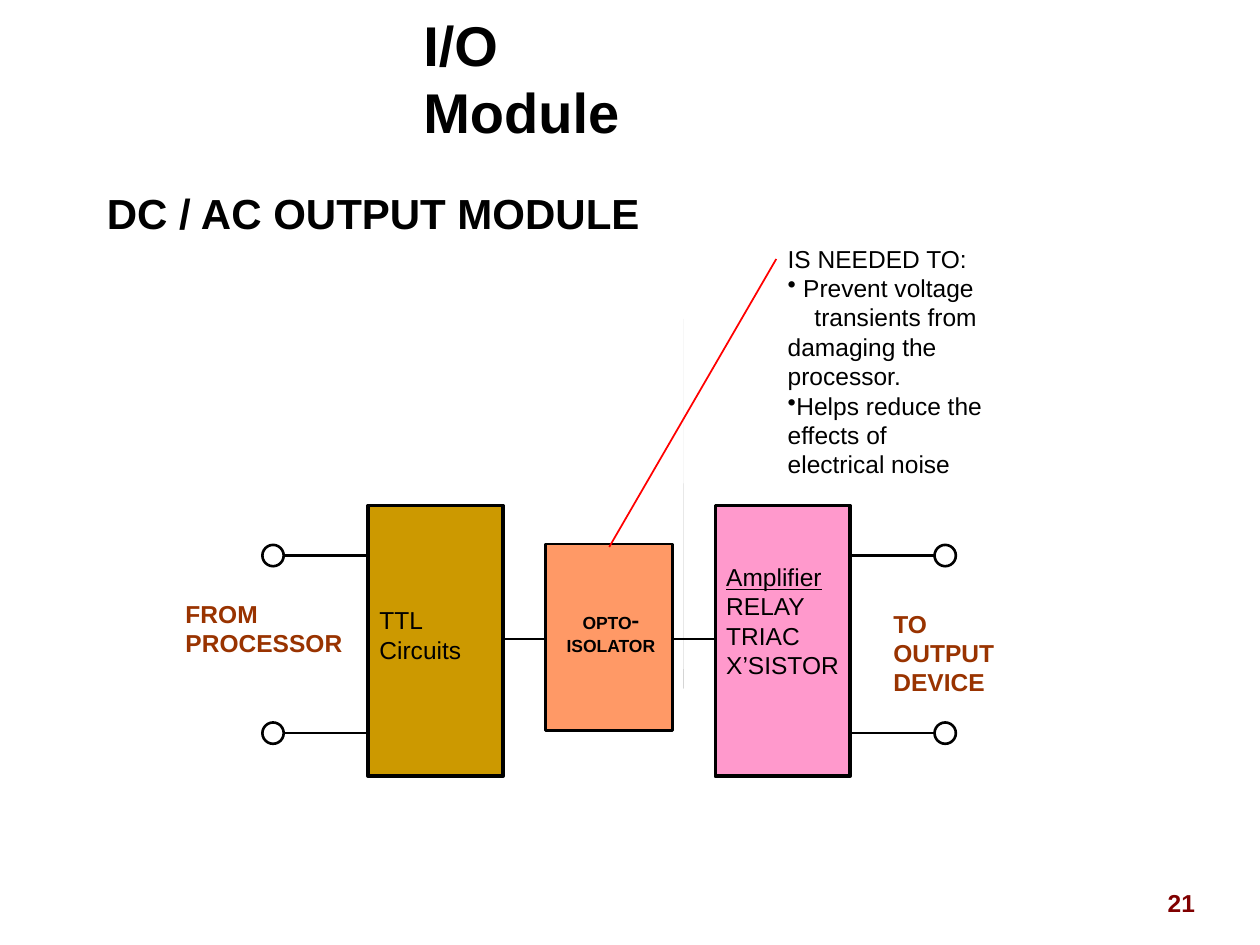
import pptx
import pptx.util
import pptx.dml.color
import pptx.enum.shapes
import pptx.enum.text
import pptx.oxml.ns
import lxml.etree

Cm = pptx.util.Cm
Pt = pptx.util.Pt
SHAPES = pptx.enum.shapes.MSO_SHAPE
ALIGN = pptx.enum.text.PP_ALIGN

COLORS = {"black": "000000", "maroon": "800000", "brown": "993300", "red": "FF0000",
          "gold": "CC9900", "orange": "FF9966", "pink": "FF99CC", "silver": "C0C0C0"}

TITLE = "I/O Module"
HEADING = "DC / AC OUTPUT MODULE"
PAGE_NUMBER = "21"
REASONS = [("IS NEEDED TO:", {}),
           (" Prevent voltage", {"bullet": "•"}),
           ("transients from damaging the processor.", {"indent": 0.54}),
           ("Helps reduce the effects of electrical noise", {"bullet": "•"})]
ISOLATOR = [("OPTO", {}), ("ISOLATOR", {})]
AMPLIFIER = [("Amplifier", {"underline": True}), ("RELAY", {}), ("TRIAC", {}), ("X’SISTOR", {})]
LABELS = [
    (["FROM PROCESSOR"], (3.71, 12.04, 3.56, 1.9), {"color": "brown", "bold": True}),
    (["TTL", "Circuits"], (7.62, 12.17, 2.24, 1.98), {}),
    (["TO", "OUTPUT", "DEVICE"], (17.98, 12.24, 3.38, 1.9), {"color": "brown", "bold": True}),
]

CENTER_X = 12.28
LINK_Y = 12.88
BLOCK_X, BLOCK_Y, BLOCK_W, BLOCK_H = 7.42, 10.19, 2.72, 5.46
ISOLATOR_W, ISOLATOR_H, ISOLATOR_Y = 2.56, 3.76, 10.97
TERMINAL_ROWS = (11.2, 14.78)
TERMINAL_SIZE = 0.43
LEAD = 1.7


def rgb(name):
    return pptx.dml.color.RGBColor.from_string(COLORS[name])


def place(box, left, top, width, height):
    box.left, box.top, box.width, box.height = Cm(left), Cm(top), Cm(width), Cm(height)


def add_span(para, text, size=14, font="Arial", color="black", bold=False, underline=False):
    span = para.add_run()
    span.text = text
    span.font.size = Pt(size)
    span.font.name = font
    span.font.bold = bold
    span.font.underline = underline
    span.font.color.rgb = rgb(color)


def write(box, lines, inset=0.03, align=ALIGN.LEFT, wrap=True, **style):
    frame = box.text_frame
    frame.word_wrap = wrap
    frame.auto_size = pptx.enum.text.MSO_AUTO_SIZE.NONE
    frame.vertical_anchor = pptx.enum.text.MSO_ANCHOR.TOP
    if inset is not None:
        frame.margin_left = frame.margin_right = Cm(inset)
        frame.margin_top = frame.margin_bottom = Cm(inset)
    for index, line in enumerate(lines):
        text, extra = (line, {}) if isinstance(line, str) else line
        extra = {**style, **extra}
        bullet = extra.pop("bullet", None)
        indent = extra.pop("indent", 0)
        para = frame.paragraphs[0] if index == 0 else frame.add_paragraph()
        para.alignment = align
        para.space_before = Pt(0)
        properties = para._p.get_or_add_pPr()
        properties.set("marL", "0")
        properties.set("indent", str(int(Cm(indent))))
        mark = lxml.etree.SubElement(
            properties, pptx.oxml.ns.qn("a:buChar" if bullet else "a:buNone"))
        if bullet:
            mark.set("char", bullet)
        add_span(para, text, **extra)


def add_text(page, lines, area, **style):
    box = page.shapes.add_textbox(*map(Cm, area))
    write(box, lines, **style)
    return box


def add_box(page, kind, area, fill=None, line="black", weight=1.5):
    box = page.shapes.add_shape(kind, *map(Cm, area))
    box.shadow.inherit = False
    if fill:
        box.fill.solid()
        box.fill.fore_color.rgb = rgb(fill)
    else:
        box.fill.background()
    if line:
        box.line.color.rgb = rgb(line)
        box.line.width = Pt(weight)
    else:
        box.line.fill.background()
    return box


def add_wire(page, start, end, y):
    wire = page.shapes.add_connector(
        pptx.enum.shapes.MSO_CONNECTOR.STRAIGHT, Cm(start), Cm(y), Cm(end), Cm(y))
    wire.line.color.rgb = rgb("black")
    wire.line.width = Pt(1.5)
    lxml.etree.SubElement(wire._element.spPr, pptx.oxml.ns.qn("a:effectLst"))


def add_divider(page):
    builder = page.shapes.build_freeform(Cm(13.77), Cm(6.43))
    builder.add_line_segments([(Cm(13.77), Cm(13.89)), (Cm(13.78), Cm(13.87))])
    divider = builder.convert_to_shape()
    divider.shadow.inherit = False
    divider.fill.solid()
    divider.fill.fore_color.rgb = rgb("silver")
    divider.line.fill.background()


def add_circuit(page, side, fill):
    def mirror(x):
        return CENTER_X + side * (CENTER_X - x)

    left = min(mirror(BLOCK_X), mirror(BLOCK_X + BLOCK_W))
    add_box(page, SHAPES.RECTANGLE, (left, BLOCK_Y, BLOCK_W, BLOCK_H), fill, weight=2)
    add_wire(page, mirror(BLOCK_X + BLOCK_W), mirror(CENTER_X - ISOLATOR_W / 2), LINK_Y)
    radius = TERMINAL_SIZE / 2
    for y in TERMINAL_ROWS:
        add_wire(page, mirror(BLOCK_X), mirror(BLOCK_X - LEAD), y)
        center = mirror(BLOCK_X - LEAD - radius)
        add_box(page, SHAPES.OVAL, (center - radius, y - radius, TERMINAL_SIZE, TERMINAL_SIZE))


def main():
    deck = pptx.Presentation()
    deck.slide_width, deck.slide_height = Cm(25.4), Cm(19.05)
    page = deck.slides.add_slide(deck.slide_layouts[1])

    title, heading = page.placeholders
    place(title, 8.28, 0.08, 6.1, 2.9)
    write(title, [TITLE], inset=None, size=32, bold=True)
    place(heading, 1.9, 3.66, 21.59, 1.27)
    write(heading, [HEADING], inset=None, size=24, bold=True)
    add_text(page, [PAGE_NUMBER], (23.29, 17.78, 1.07, 0.86),
             inset=None, wrap=False, color="maroon", bold=True)

    add_divider(page)
    add_box(page, SHAPES.RECTANGLE,
            (CENTER_X - ISOLATOR_W / 2, ISOLATOR_Y, ISOLATOR_W, ISOLATOR_H), "orange")
    isolator = add_text(page, ISOLATOR, (11.3, 12.17, 2.03, 1.57),
                        align=ALIGN.CENTER, size=10, bold=True)
    add_span(isolator.text_frame.paragraphs[0], "-", font="Calibri", bold=True)

    callout = add_box(page, SHAPES.LINE_CALLOUT_1_NO_BORDER,
                      (15.85, 4.88, 4.01, 4.88), line="red", weight=1)
    for index, value in enumerate((0.07, -0.05, 1.26, -0.89)):
        callout.adjustments[index] = value
    write(callout, REASONS)

    for side, fill in ((-1, "gold"), (1, "pink")):
        add_circuit(page, side, fill)
    amplifier = add_box(page, SHAPES.RECTANGLE, (14.61, 11.3, 2.39, 2.62), "pink", line=None)
    write(amplifier, AMPLIFIER)
    for lines, area, style in LABELS:
        add_text(page, lines, area, **style)

    deck.save("out.pptx")


if __name__ == "__main__":
    main()
